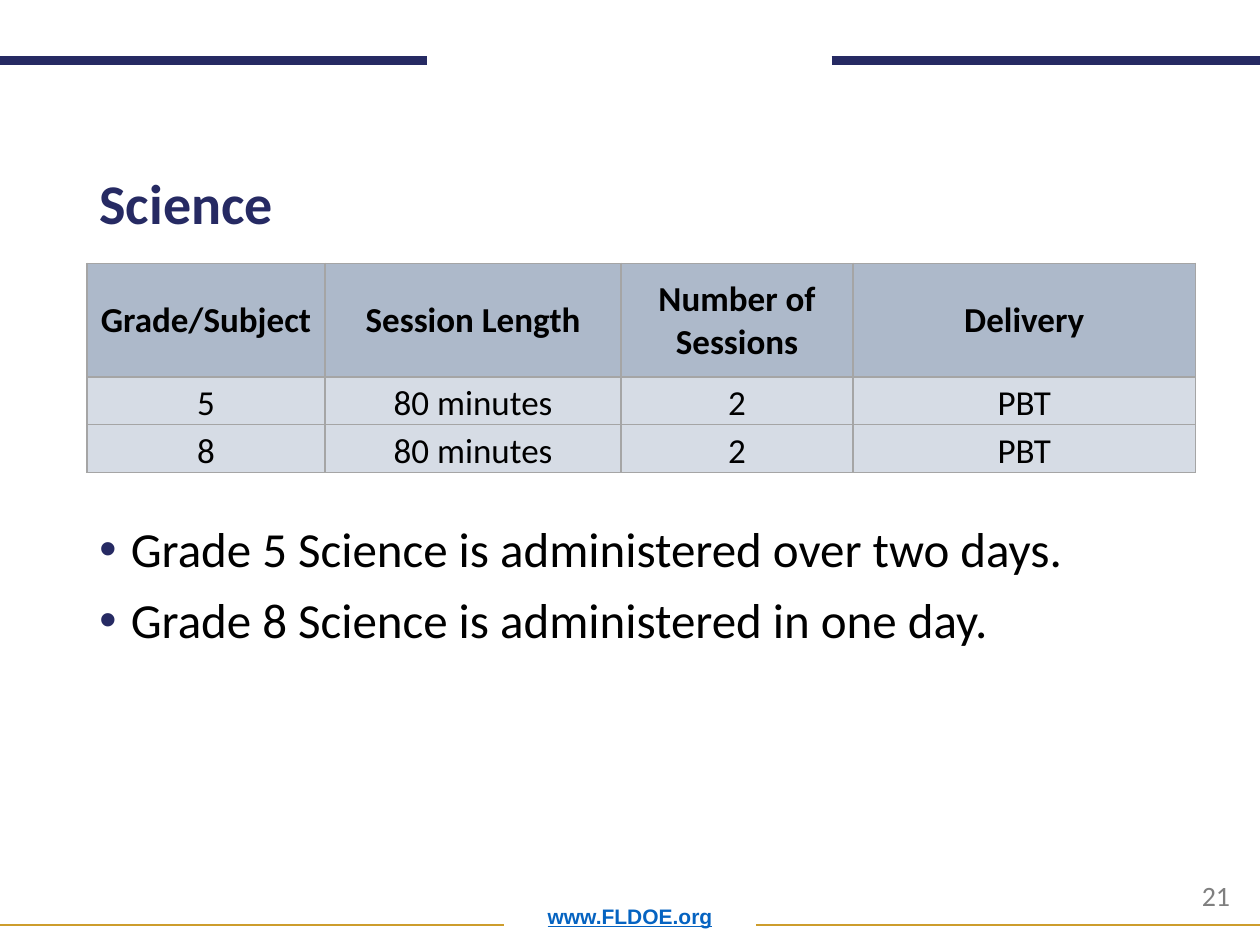
from dataclasses import dataclass

from lxml import etree
from pptx import Presentation
from pptx.dml.color import RGBColor as RGB
from pptx.enum.shapes import MSO_CONNECTOR as CONNECTOR
from pptx.enum.text import MSO_ANCHOR as ANCHOR, PP_ALIGN as ALIGN
from pptx.oxml import parse_xml
from pptx.oxml.ns import nsdecls, qn
from pptx.util import Inches, Pt


@dataclass(frozen=True)
class Theme:
    navy: str = "262A63"
    gold: str = "CD9D2C"
    link: str = "0563C1"
    gray: str = "7F7F7F"
    black: str = "000000"
    border: str = "A5A5A5"
    header_fill: str = "ADB9CA"
    body_fill: str = "D6DCE5"
    font: str = "Calibri"
    link_font: str = "Arial"
    title_size: int = 32
    bullet_size: int = 28
    table_size: int = 20
    number_size: int = 16
    link_size: int = 12


theme = Theme()


def style(paragraph, size, color, bold=False, font=theme.font):
    paragraph.font.name = font
    paragraph.font.size = Pt(size)
    paragraph.font.bold = bold
    paragraph.font.color.rgb = RGB.from_string(color)


def add_text(left, top, width, height, lines):
    frame = slide.shapes.add_textbox(
        Inches(left), Inches(top), Inches(width), Inches(height)).text_frame
    frame.word_wrap = True
    frame.text = "\n".join(lines)
    return frame


deck = Presentation()
deck.slide_width, deck.slide_height = Inches(10), Inches(7.5)
slide = deck.slides.add_slide(deck.slide_layouts[5])
LEFT, WIDTH = 0.69, 8.62

# Rules at the top and bottom edges
for start, end, y, color, weight in [
    (0, 3.39, 0.48, theme.navy, 5),
    (6.6, 10, 0.48, theme.navy, 5),
    (0, 4, 7.34, theme.gold, 1),
    (6, 10, 7.34, theme.gold, 1),
]:
    rule = slide.shapes.add_connector(
        CONNECTOR.STRAIGHT, Inches(start), Inches(y), Inches(end), Inches(y))
    rule.line.color.rgb = RGB.from_string(color)
    rule.line.width = Pt(weight)
    etree.SubElement(rule._element.spPr, qn("a:effectLst"))

# Web address and page number
address = add_text(LEFT, 7, WIDTH, 0.42, ["www.FLDOE.org"])
address.vertical_anchor = ANCHOR.BOTTOM
address_line = address.paragraphs[0]
address_line.alignment = ALIGN.CENTER
address_line.line_spacing = 0.9
style(address_line, theme.link_size, theme.link, True, theme.link_font)
address_line.font.underline = True

page_number = add_text(9.44, 6.92, 0.52, 0.37, ["21"])
style(page_number.paragraphs[0], theme.number_size, theme.gray)

# Title
title = slide.shapes.title
title.left, title.top = Inches(LEFT), Inches(1.06)
title.width, title.height = Inches(WIDTH), Inches(0.87)
title.text_frame.text = "Science"
title.text_frame.vertical_anchor = ANCHOR.BOTTOM
heading = title.text_frame.paragraphs[0]
heading.alignment = ALIGN.LEFT
heading.line_spacing = 0.9
style(heading, theme.title_size, theme.navy, True)

# Session table
sessions = [
    ("Grade/Subject", "Session Length", "Number of Sessions", "Delivery"),
    ("5", "80 minutes", "2", "PBT"),
    ("8", "80 minutes", "2", "PBT"),
]
column_widths = [1.89, 2.35, 1.84, 2.72]
row_heights = [0.9, 0.38, 0.38]
table = slide.shapes.add_table(
    len(sessions), len(column_widths), Inches(LEFT), Inches(2.09),
    Inches(sum(column_widths)), Inches(sum(row_heights))).table
table.horz_banding = False
for column, width in zip(table.columns, column_widths):
    column.width = Inches(width)
for row, height in zip(table.rows, row_heights):
    row.height = Inches(height)

for r, values in enumerate(sessions):
    is_header = r == 0
    for c, value in enumerate(values):
        cell = table.cell(r, c)
        cell.text = value
        cell.margin_left = cell.margin_right = cell.margin_top = Inches(0.01)
        cell.margin_bottom = 0
        cell.vertical_anchor = ANCHOR.MIDDLE if is_header else ANCHOR.BOTTOM
        entry = cell.text_frame.paragraphs[0]
        entry.alignment = ALIGN.CENTER
        style(entry, theme.table_size, theme.black, is_header)
        for side in "LRTB":
            cell._tc.get_or_add_tcPr().append(parse_xml(
                f'<a:ln{side} {nsdecls("a")} w="{Pt(1)}"><a:solidFill>'
                f'<a:srgbClr val="{theme.border}"/></a:solidFill></a:ln{side}>'))
        cell.fill.solid()
        cell.fill.fore_color.rgb = RGB.from_string(
            theme.header_fill if is_header else theme.body_fill)

# Bullets below the table
notes = add_text(LEFT, 4.12, WIDTH, 2.73, [
    "Grade 5 Science is administered over two days.",
    "Grade 8 Science is administered in one day.",
])
for i, bullet in enumerate(notes.paragraphs):
    bullet.line_spacing = 0.9
    bullet.space_before = Pt(10 if i else 0)
    props = bullet._p.get_or_add_pPr()
    props.set("marL", str(Inches(0.25)))
    props.set("indent", str(Inches(-0.25)))
    mark_color = etree.SubElement(props, qn("a:buClr"))
    etree.SubElement(mark_color, qn("a:srgbClr"), val=theme.navy)
    etree.SubElement(props, qn("a:buFont"), typeface=theme.link_font)
    etree.SubElement(props, qn("a:buChar"), char="•")
    style(bullet, theme.bullet_size, theme.black)

deck.save("out.pptx")
